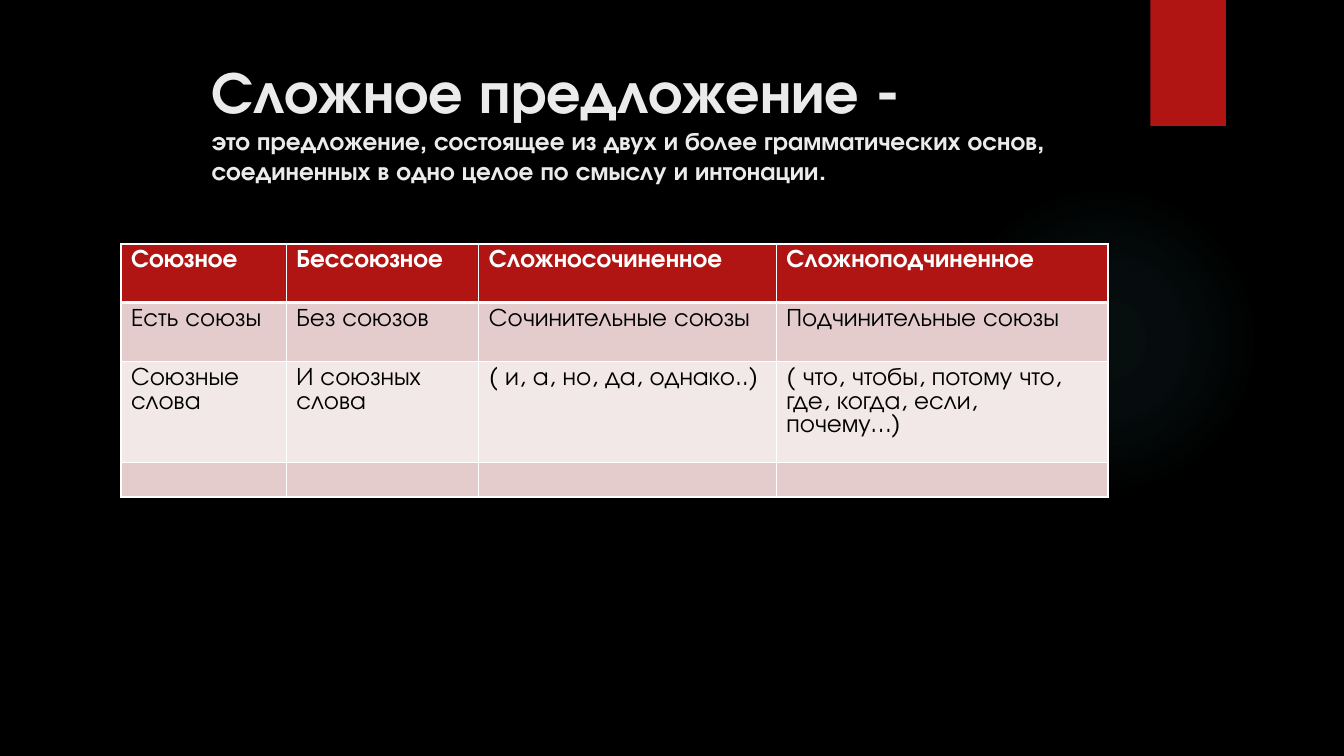
import pptx
import pptx.util
import pptx.dml.color
import pptx.enum.shapes
import pptx.enum.text
import pptx.oxml.ns
import lxml.etree

Inches = pptx.util.Inches
Pt = pptx.util.Pt
qn = pptx.oxml.ns.qn
SHAPE = pptx.enum.shapes.MSO_SHAPE

FONT = "TeX Gyre Adventor"
COLORS = {
    "back": "000000",
    "red": "B01513",
    "glow": "50B9C1",
    "title": "EBEBEB",
    "white": "FFFFFF",
    "black": "000000",
    "dark": "E4CCCC",
    "light": "F2E8E7",
}
WIDTHS = [1.64, 1.91, 2.95, 3.29]
HEIGHTS = [0.58, 0.59, 0.85, 0.34]
ROWS = [
    ["Союзное", "Бессоюзное", "Сложносочиненное", "Сложноподчиненное"],
    ["Есть союзы", "Без союзов", "Сочинительные союзы", "Подчинительные союзы"],
    ["Союзные слова", "И союзных слова", "( и, а, но, да, однако..)",
     "( что, чтобы, потому что, где, когда, если, почему…)"],
    ["", "", "", ""],
]


def rgb(name):
    return pptx.dml.color.RGBColor.from_string(COLORS[name])


def node(parent, tag, **attrs):
    return lxml.etree.SubElement(parent, qn(tag), attrs)


def add_run(para, text, size, color, bold):
    run = para.add_run()
    run.text = text
    font = run.font
    font.name, font.size, font.bold = FONT, Pt(size), bold
    font.color.rgb = rgb(color)


def add_shape(slide, kind, left, top, width, height):
    """Add a preset shape with neither line nor shadow."""
    shape = slide.shapes.add_shape(
        kind, Inches(left), Inches(top), Inches(width), Inches(height))
    shape.shadow.inherit = False
    shape.line.fill.background()
    return shape


def add_glow(slide):
    """Add a circle that fades out from its centre."""
    glow = add_shape(slide, SHAPE.OVAL, 9.41, 1.83, 3.08, 3.08)
    props = glow._element.spPr
    grad = node(props, "a:gradFill", rotWithShape="1")
    stops = node(grad, "a:gsLst")
    for pos, alpha in [(0, 7), (36, 6), (69, 0)]:
        stop = node(stops, "a:gs", pos=str(pos * 1000))
        color = node(stop, "a:srgbClr", val=COLORS["glow"])
        node(color, "a:alpha", val=str(alpha * 1000))
    focus = node(grad, "a:path", path="circle")
    node(focus, "a:fillToRect", l="50000", t="50000", r="50000", b="50000")
    props.find(qn("a:prstGeom")).addnext(grad)


def add_title(slide):
    box = slide.shapes.add_textbox(
        Inches(2), Inches(0.49), Inches(8.99), Inches(1.58))
    frame = box.text_frame
    frame.word_wrap = True
    frame.vertical_anchor = pptx.enum.text.MSO_ANCHOR.TOP
    para = frame.paragraphs[0]
    add_run(para, "Сложное предложение - ", 42, "title", True)
    para.add_line_break()
    add_run(para, "это предложение, состоящее из двух и более грамматических "
            "основ, соединенных в одно целое по смыслу и интонации.",
            18, "title", True)


def set_edges(cell, top, bottom):
    """Draw white cell borders; top and bottom are widths in points."""
    props = cell._tc.get_or_add_tcPr()
    edges = [("L", 1), ("R", 1), ("T", top), ("B", bottom)]
    for place, (side, width) in enumerate(edges):
        line = node(props, f"a:ln{side}", w=str(Pt(width)))
        fill = node(line, "a:solidFill")
        node(fill, "a:srgbClr", val=COLORS["white"])
        props.insert(place, line)


def fill_cell(cell, text, row):
    head = row == 0
    cell.fill.solid()
    cell.fill.fore_color.rgb = rgb(
        "red" if head else "dark" if row % 2 else "light")
    if text:
        para = cell.text_frame.paragraphs[0]
        add_run(para, text, 18, "white" if head else "black", head)
    else:
        cell.margin_top = cell.margin_bottom = 0
    set_edges(cell, 3 if row == 1 else 1, 3 if head else 1)


def add_table(slide):
    frame = slide.shapes.add_table(
        len(ROWS), len(WIDTHS), Inches(1.2), Inches(2.42),
        Inches(sum(WIDTHS)), Inches(sum(HEIGHTS)))
    table = frame.table
    for col, width in zip(table.columns, WIDTHS):
        col.width = Inches(width)
    for row, height in zip(table.rows, HEIGHTS):
        row.height = Inches(height)
    for r, texts in enumerate(ROWS):
        for c, text in enumerate(texts):
            fill_cell(table.cell(r, c), text, r)


def main():
    deck = pptx.Presentation()
    deck.slide_width, deck.slide_height = Inches(13.33), Inches(7.5)
    slide = deck.slides.add_slide(deck.slide_layouts[6])
    slide.background.fill.solid()
    slide.background.fill.fore_color.rgb = rgb("back")
    add_glow(slide)
    flag = add_shape(slide, SHAPE.RECTANGLE, 11.41, 0, 0.75, 1.25)
    flag.fill.solid()
    flag.fill.fore_color.rgb = rgb("red")
    add_title(slide)
    add_table(slide)
    deck.save("out.pptx")


if __name__ == "__main__":
    main()
